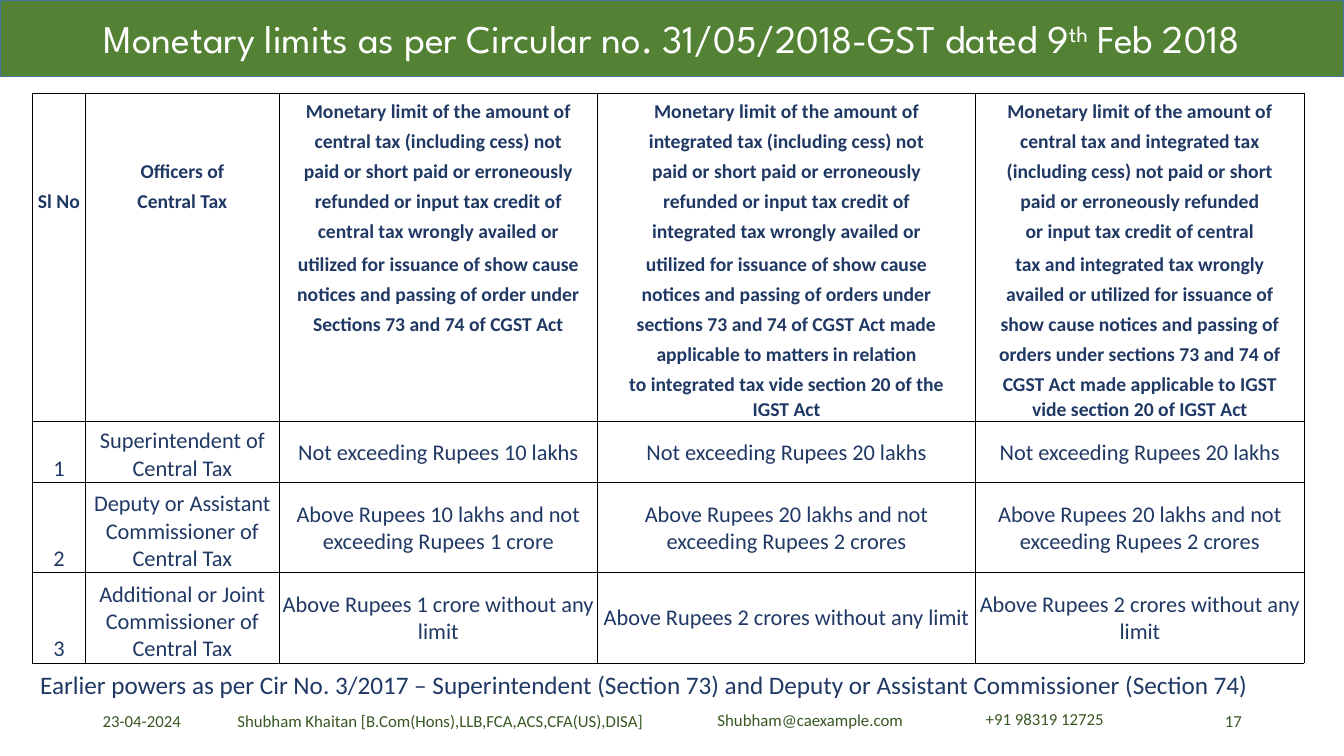
from dataclasses import dataclass

from lxml import etree
from pptx import Presentation
from pptx.dml.color import RGBColor
from pptx.enum.shapes import MSO_SHAPE
from pptx.enum.text import MSO_ANCHOR, PP_ALIGN
from pptx.oxml.ns import qn
from pptx.util import Pt

LEFT, CENTER, RIGHT = PP_ALIGN.LEFT, PP_ALIGN.CENTER, PP_ALIGN.RIGHT
TOP, MIDDLE, BOTTOM = MSO_ANCHOR.TOP, MSO_ANCHOR.MIDDLE, MSO_ANCHOR.BOTTOM
RECTANGLE = MSO_SHAPE.RECTANGLE


@dataclass(frozen=True)
class Theme:
    title_font: str = "League Spartan"
    body_font: str = "Calibri"
    banner: str = "548235"
    banner_line: str = "43739E"
    white: str = "FFFFFF"
    navy: str = "203864"
    footer: str = "385723"
    border: str = "000000"
    title_size: int = 28
    note_size: int = 18
    body_size: int = 16
    head_size: int = 14
    footer_size: int = 12


THEME = Theme()
WIDTH, HEIGHT = 960, 540

COLUMN_WIDTHS = [38.2, 138.2, 227.5, 270, 234.7]
HEAD_HEIGHTS = [21.5] * 5 + [23.5] + [21.5] * 4 + [17]
BODY_HEIGHTS = [43.5, 64.5, 64.5]

# First row and lines of each column heading, one line per table row
HEADINGS = [
    (3, ["Sl No"]),
    (2, ["Officers of", "Central Tax"]),
    (0, ["Monetary limit of the amount of",
         "central tax (including cess) not",
         "paid or short paid or erroneously",
         "refunded or input tax credit of",
         "central tax wrongly availed or",
         "utilized for issuance of show cause",
         "notices and passing of order under",
         "Sections 73 and 74 of CGST Act"]),
    (0, ["Monetary limit of the amount of",
         "integrated tax (including cess) not",
         "paid or short paid or erroneously",
         "refunded or input tax credit of",
         "integrated tax wrongly availed or",
         "utilized for issuance of show cause",
         "notices and passing of orders under",
         "sections 73 and 74 of CGST Act made",
         "applicable to matters in relation",
         "to integrated tax vide section 20 of the",
         "IGST Act"]),
    (0, ["Monetary limit of the amount of",
         "central tax and integrated tax",
         "(including cess) not paid or short",
         "paid or erroneously refunded",
         "or input tax credit of central",
         "tax and integrated tax wrongly",
         "availed or utilized for issuance of",
         "show cause notices and passing of",
         "orders under sections 73 and 74 of",
         "CGST Act made applicable to IGST",
         "vide section 20 of IGST Act"]),
]

LIMITS = [
    ["1", "Superintendent of Central Tax", "Not exceeding Rupees 10 lakhs",
     "Not exceeding Rupees 20 lakhs", "Not exceeding Rupees 20 lakhs"],
    ["2", "Deputy or Assistant\vCommissioner of Central Tax",
     "Above Rupees 10 lakhs and not exceeding Rupees 1 crore",
     "Above Rupees 20 lakhs and not exceeding Rupees 2 crores",
     "Above Rupees 20 lakhs and not\vexceeding Rupees 2 crores"],
    ["3", "Additional or Joint\vCommissioner of Central Tax",
     "Above Rupees 1 crore without any limit",
     "Above Rupees 2 crores without any limit",
     "Above Rupees 2 crores without any limit"],
]

FOOTERS = [
    ("23-04-2024", 66.2, 500.4, 216, 28.8, LEFT, MIDDLE),
    ("Shubham Khaitan [B.Com(Hons),LLB,FCA,ACS,CFA(US),DISA]",
     152.6, 500.4, 324, 28.8, CENTER, MIDDLE),
    ("17", 678.2, 500.4, 216, 28.8, RIGHT, MIDDLE),
    ("Shubham@caexample.com", 505.4, 503.3, 210.2, 21.6, LEFT, TOP),
    ("+91 98319 12725", 697, 502.6, 210.2, 21.6, LEFT, TOP),
]


def style_run(r, size, color, font=THEME.body_font, bold=False):
    r.font.size = Pt(size)
    r.font.name = font
    r.font.bold = bold
    r.font.color.rgb = RGBColor.from_string(color)


def add_banner(slide):
    sp = slide.shapes.add_shape(RECTANGLE, 0, 0, Pt(WIDTH), Pt(54.7))
    sp.shadow.inherit = False
    sp.fill.solid()
    sp.fill.fore_color.rgb = RGBColor.from_string(THEME.banner)
    sp.line.color.rgb = RGBColor.from_string(THEME.banner_line)
    sp.line.width = Pt(1)
    tf = sp.text_frame
    tf.vertical_anchor = MIDDLE
    p = tf.paragraphs[0]
    p.alignment = CENTER
    for text, baseline in [
        ("Monetary limits as per Circular no. 31/05/2018-GST dated 9", 0),
        ("th", 30000),
        (" Feb 2018", 0),
    ]:
        r = p.add_run()
        r.text = text
        style_run(r, THEME.title_size, THEME.white, THEME.title_font)
        if baseline:
            r.font.superscript = True if hasattr(r.font, "superscript") else None
            r._r.get_or_add_rPr().set("baseline", str(baseline))


def add_text(slide, text, x, y, w, h, align, anchor, size, color):
    tf = slide.shapes.add_textbox(Pt(x), Pt(y), Pt(w), Pt(h)).text_frame
    tf.word_wrap = True
    tf.vertical_anchor = anchor
    tf.text = text
    p = tf.paragraphs[0]
    p.alignment = align
    style_run(p.runs[0], size, color)


def set_borders(cell, sides):
    """Draw the named sides (L, R, T, B) and clear the others."""
    tcPr = cell._tc.get_or_add_tcPr()
    for side in "LRTB":
        ln = etree.SubElement(tcPr, qn(f"a:ln{side}"), w=str(Pt(0.5)))
        if side in sides:
            fill = etree.SubElement(ln, qn("a:solidFill"))
            etree.SubElement(fill, qn("a:srgbClr"), val=THEME.border)
        else:
            etree.SubElement(ln, qn("a:noFill"))


def fill_cell(cell, text, size, anchor, bold, sides):
    cell.margin_left = cell.margin_right = cell.margin_top = Pt(0.7)
    cell.margin_bottom = 0
    cell.vertical_anchor = anchor
    set_borders(cell, sides)
    cell.fill.background()
    p = cell.text_frame.paragraphs[0]
    p.alignment = CENTER
    if text:
        p.text = text
        for r in p.runs:
            style_run(r, size, THEME.navy, bold=bold)
    else:
        # Keeps an empty cell from stretching its row
        etree.SubElement(p._p, qn("a:endParaRPr"), sz=str(size * 100))


def add_limits_table(slide):
    heights = HEAD_HEIGHTS + BODY_HEIGHTS
    head_rows = len(HEAD_HEIGHTS)
    table = slide.shapes.add_table(
        len(heights), len(COLUMN_WIDTHS), Pt(23), Pt(66.7),
        Pt(sum(COLUMN_WIDTHS)), Pt(sum(heights))).table
    table.first_row = table.horz_banding = False
    for column, width in zip(table.columns, COLUMN_WIDTHS):
        column.width = Pt(width)
    for row, height in zip(table.rows, heights):
        row.height = Pt(height)

    for col, (start, lines) in enumerate(HEADINGS):
        for row in range(head_rows):
            text = lines[row - start] if start <= row < start + len(lines) else ""
            sides = "LR" + "T" * (row == 0) + "B" * (row == head_rows - 1)
            fill_cell(table.cell(row, col), text, THEME.head_size, BOTTOM, True, sides)
    for row, texts in enumerate(LIMITS, head_rows):
        for col, text in enumerate(texts):
            anchor = BOTTOM if col < 2 else MIDDLE
            fill_cell(table.cell(row, col), text, THEME.body_size, anchor, False, "LRTB")


def main():
    prs = Presentation()
    prs.slide_width, prs.slide_height = Pt(WIDTH), Pt(HEIGHT)
    slide = prs.slides.add_slide(prs.slide_layouts[6])
    add_banner(slide)
    for footer in FOOTERS:
        add_text(slide, *footer, THEME.footer_size, THEME.footer)
    add_limits_table(slide)
    add_text(slide, "Earlier powers as per Cir No. 3/2017 – Superintendent (Section 73) "
             "and Deputy or Assistant Commissioner (Section 74)",
             21.6, 474.5, 893.5, 28.8, LEFT, TOP, THEME.note_size, THEME.navy)
    prs.save("out.pptx")


if __name__ == "__main__":
    main()
